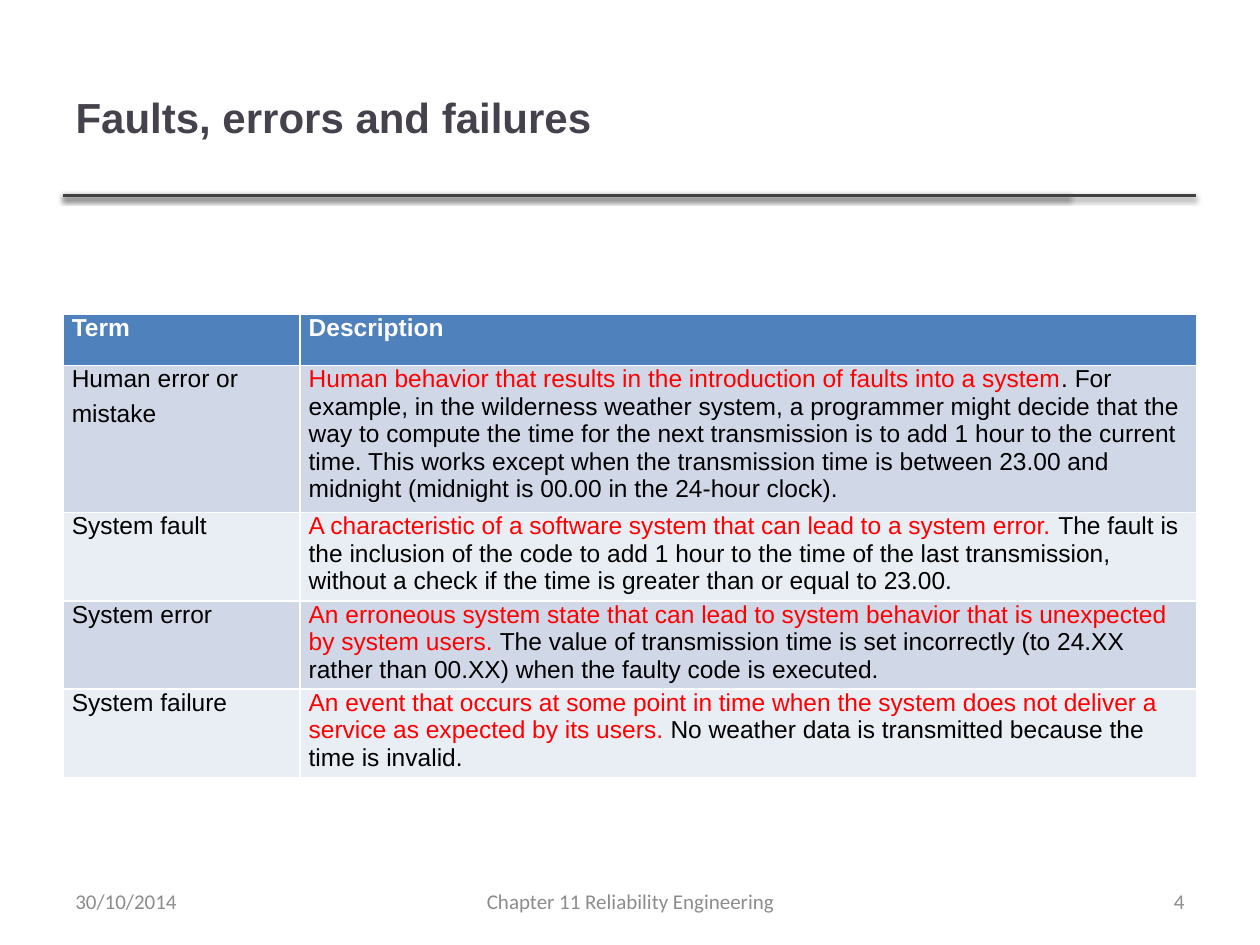
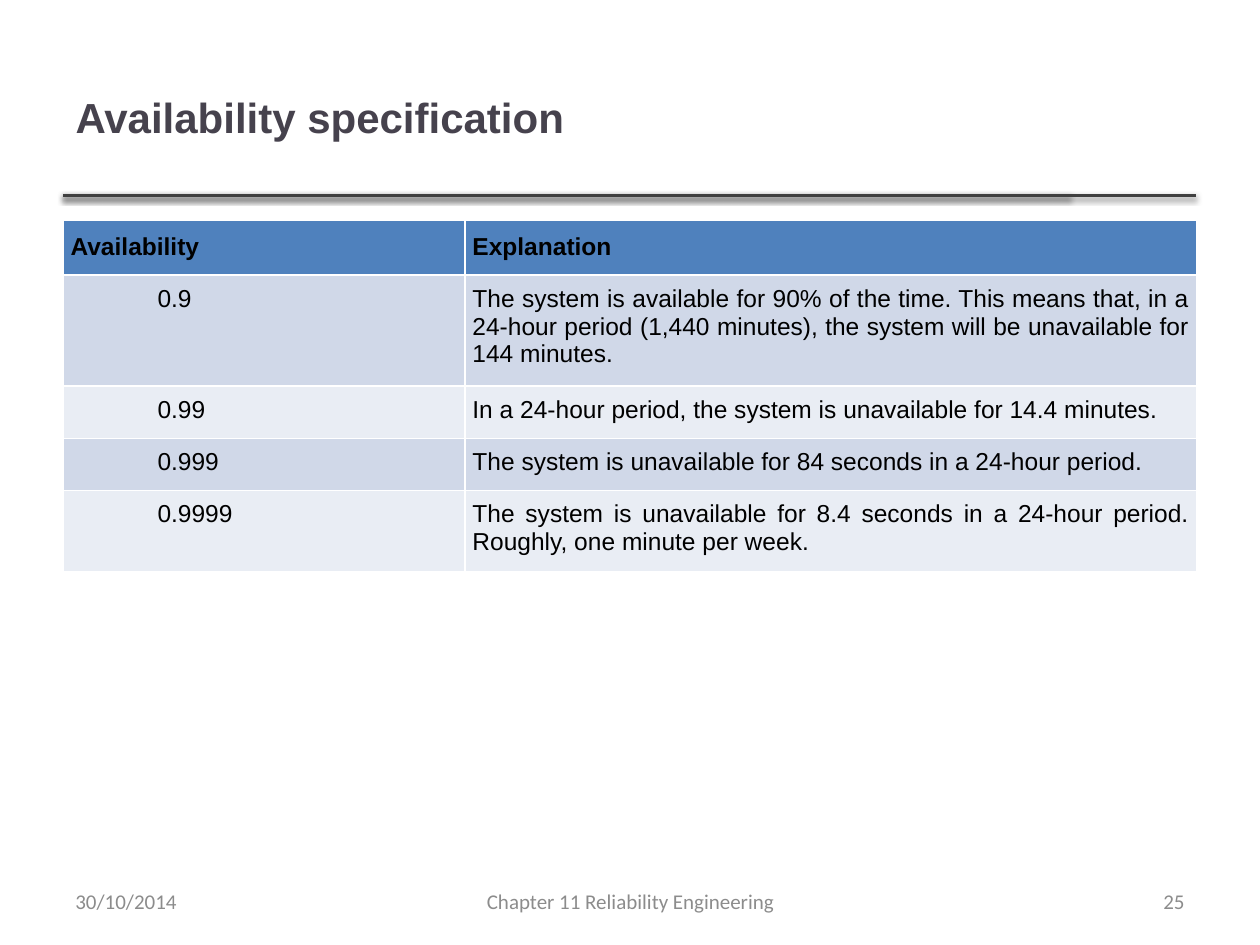
from lxml import etree
from pptx import Presentation
from pptx import util as u
from pptx.dml.color import RGBColor
from pptx.enum import shapes, text
from pptx.oxml import ns

HUES = {
    "title": "46424D", "rule": "404040", "foot": "8C8C8C", "head": "4F81BD",
    "odd": "D0D8E8", "even": "E9EDF4", "black": "000000", "white": "FFFFFF",
    "red": "FF0000",
}
ALIGN = text.PP_ALIGN
MIDDLE = text.MSO_ANCHOR.MIDDLE

FAULTS = [
    ("Human error or\nmistake",
     "Human behavior that results in the introduction of faults into a system",
     ". For example, in the wilderness weather system, a programmer might decide "
     "that the way to compute the time for the next transmission is to add 1 hour "
     "to the current time. This works except when the transmission time is between "
     "23.00 and midnight (midnight is 00.00 in the 24-hour clock)."),
    ("System fault",
     "A characteristic of a software system that can lead to a system error. ",
     "The fault is the inclusion of the code to add 1 hour to the time of the last "
     "transmission, without a check if the time is greater than or equal to 23.00."),
    ("System error",
     "An erroneous system state that can lead to system behavior that is "
     "unexpected by system users. ",
     "The value of transmission time is set incorrectly (to 24.XX rather than "
     "00.XX) when the faulty code is executed."),
    ("System failure",
     "An event that occurs at some point in time when the system does not deliver "
     "a service as expected by its users. ",
     "No weather data is transmitted because the time is invalid."),
]
LEVELS = [
    ("0.9", "The system is available for 90% of the time. This means that, in a "
            "24-hour period (1,440 minutes), the system will be unavailable for "
            "144 minutes."),
    ("0.99", "In a 24-hour period, the system is unavailable for 14.4 minutes."),
    ("0.999", "The system is unavailable for 84 seconds in a 24-hour period."),
    ("0.9999", "The system is unavailable for 8.4 seconds in a 24-hour period. "
               "Roughly, one minute per week."),
]


def color(name):
    """Return the named colour."""
    return RGBColor.from_string(HUES[name])


def write(frame, words, lead="", size=14, font="Arial", hue="black", bold=False,
          align=ALIGN.LEFT, after=0, indent=0):
    """Fill a text frame, one paragraph per line, with an optional red lead."""
    frame.word_wrap = True
    for num, line in enumerate(words.split("\n")):
        para = frame.add_paragraph() if num else frame.paragraphs[0]
        para.alignment = align
        para.space_after = u.Pt(after)
        if indent:
            props = para._p.get_or_add_pPr()
            props.set("marL", "0")
            props.set("indent", str(u.Inches(indent)))
        parts = [(lead, "red")] if lead and not num else []
        for piece, tint in parts + [(line, hue)]:
            run = para.add_run()
            run.text = piece
            run.font.size, run.font.name = u.Pt(size), font
            run.font.bold = bold
            run.font.color.rgb = color(tint)


class Deck:
    """Holds the style and the current slide."""

    def __init__(self):
        """Start an empty deck."""
        self.file = Presentation()
        self.file.slide_width = u.Inches(10)
        self.file.slide_height = u.Inches(7.5)

    def page(self, title, number):
        """Add a slide with its rules, title and footer."""
        self.slide = self.file.slides.add_slide(self.file.slide_layouts[5])
        for end in (8.49, 9.49):
            self.rule(end)
        self.title(title)
        self.foot(7.17, 2.33, str(number), ALIGN.RIGHT)
        self.foot(3.42, 3.17, "Chapter 11 Reliability Engineering", ALIGN.CENTER)
        self.foot(0.5, 2.33, "30/10/2014", ALIGN.LEFT)

    def rule(self, end):
        """Draw a shadowed line under the title."""
        line = self.slide.shapes.add_connector(
            shapes.MSO_CONNECTOR.STRAIGHT, u.Inches(0.5), u.Inches(1.55),
            u.Inches(end), u.Inches(1.55))
        line.line.color.rgb = color("rule")
        line.line.width = u.Pt(2)
        props = line._element.spPr
        glow = etree.SubElement(props, ns.qn("a:effectLst"))
        shade = etree.SubElement(
            glow, ns.qn("a:outerShdw"), blurRad=str(u.Pt(3.1)),
            dist=str(u.Pt(1.6)), dir="5400000", rotWithShape="0")
        tint = etree.SubElement(shade, ns.qn("a:srgbClr"), val=HUES["black"])
        etree.SubElement(tint, ns.qn("a:alpha"), val="38000")

    def title(self, words):
        """Place and fill the title."""
        box = self.slide.shapes.title
        box.left, box.top = u.Inches(0.5), u.Inches(0.3)
        box.width, box.height = u.Inches(7.98), u.Inches(1.25)
        box.text_frame.vertical_anchor = MIDDLE
        box.text_frame.auto_size = text.MSO_AUTO_SIZE.NONE
        write(box.text_frame, words, size=24, hue="title", bold=True)

    def foot(self, left, width, words, align):
        """Add one footer text."""
        box = self.slide.shapes.add_textbox(
            u.Inches(left), u.Inches(6.95), u.Inches(width), u.Inches(0.4))
        box.text_frame.vertical_anchor = MIDDLE
        write(box.text_frame, words, size=12, font="Calibri", hue="foot", align=align)

    def table(self, top, widths, count):
        """Add a table with header and banded fills."""
        grid = self.slide.shapes.add_table(
            count, len(widths), u.Inches(0.5), u.Inches(top),
            u.Inches(sum(widths)), u.Inches(0.41 * count)).table
        for col, width in zip(grid.columns, widths):
            col.width = u.Inches(width)
        for num, row in enumerate(grid.rows):
            row.height = u.Inches(0.41)
            band = "odd" if num % 2 else "even"
            for cell in row.cells:
                cell.fill.solid()
                cell.fill.fore_color.rgb = color(band if num else "head")
        return grid

    def cell(self, cell, words, side, top=0, base=0, **style):
        """Set the margins and text of a table cell."""
        cell.margin_left = cell.margin_right = u.Inches(side)
        cell.margin_top, cell.margin_bottom = u.Inches(top), u.Inches(base)
        write(cell.text_frame, words, **style)

    def faults(self):
        """Build the slide of fault terms."""
        self.page("Faults, errors and failures", 4)
        grid = self.table(2.49, (1.88, 7.12), len(FAULTS) + 1)
        for col, name in enumerate(("Term", "Description")):
            self.cell(grid.cell(0, col), name, 0.07, hue="white", bold=True)
        for row, (term, lead, rest) in enumerate(FAULTS, 1):
            self.cell(grid.cell(row, 0), term, 0.07, after=4)
            self.cell(grid.cell(row, 1), rest, 0.07, lead=lead)

    def levels(self):
        """Build the slide of availability levels."""
        self.page("Availability specification", 25)
        grid = self.table(1.75, (3.19, 5.81), len(LEVELS) + 1)
        for col, name in enumerate(("Availability", "Explanation")):
            self.cell(grid.cell(0, col), name, 0.06, 0.1, 0.1, bold=True)
        for row, (level, words) in enumerate(LEVELS, 1):
            self.cell(grid.cell(row, 0), level, 0.06, 0.08, 0.1, indent=0.69)
            self.cell(grid.cell(row, 1), words, 0.06, 0.08, 0.1, align=ALIGN.JUSTIFY)


def main():
    """Build and save the slides."""
    deck = Deck()
    deck.faults()
    deck.levels()
    deck.file.save("out.pptx")


if __name__ == "__main__":
    main()
